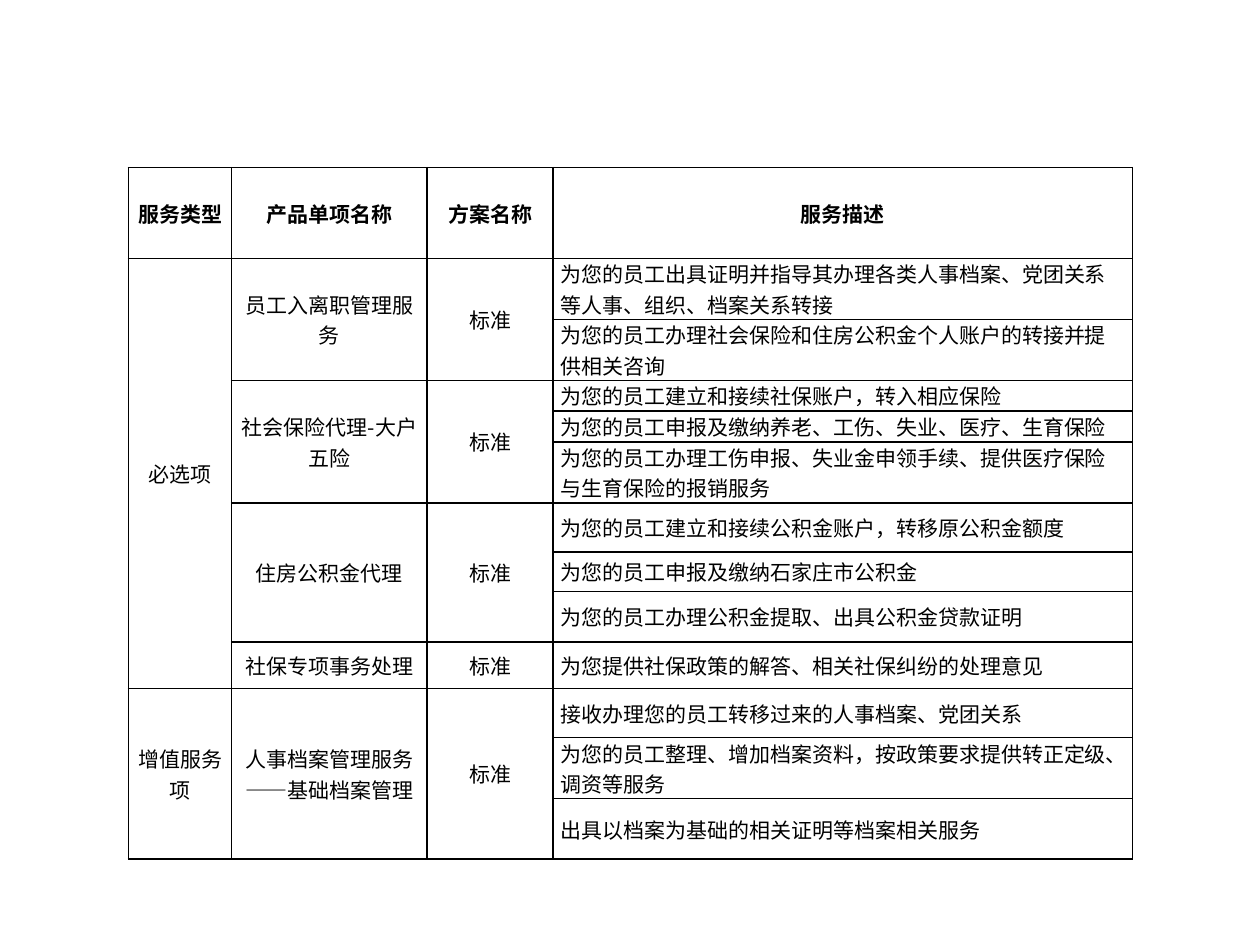
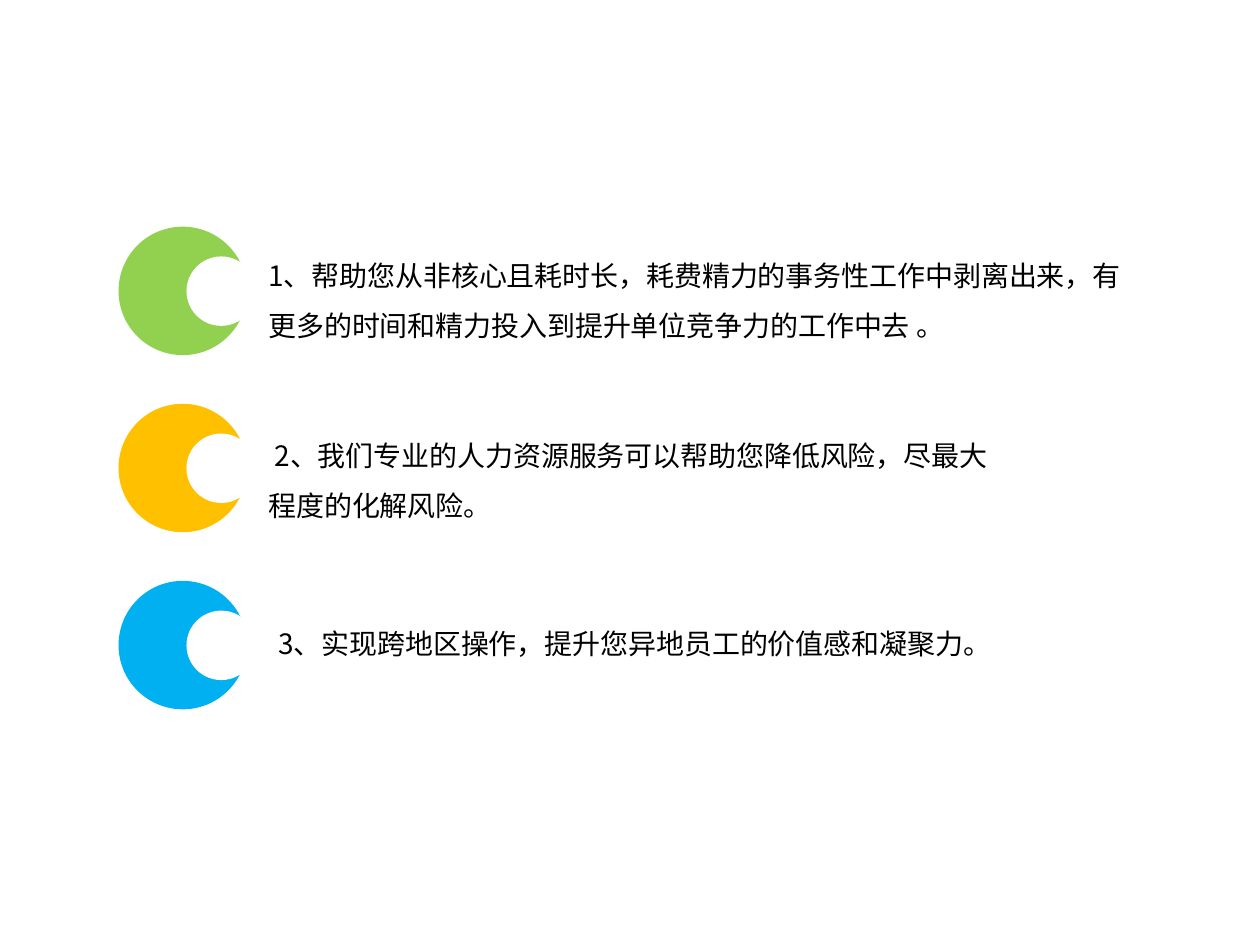
from lxml import etree
from pptx import Presentation
from pptx import util as u
from pptx.dml.color import RGBColor
from pptx.enum import shapes, text
from pptx.oxml.ns import qn

FONT = "Noto Sans CJK SC"
COLORS = {"ink": "000000", "paper": "FFFFFF", "green": "92D050",
          "amber": "FFC000", "blue": "00B0F0"}

HEADERS = ["服务类型", "产品单项名称", "方案名称", "服务描述"]
# Service type -> list of (product, plan, descriptions)
SERVICES = [
    ("必选项", [
        ("员工入离职管理服务", "标准", [
            "为您的员工出具证明并指导其办理各类人事档案、党团关系等人事、组织、档案关系转接",
            "为您的员工办理社会保险和住房公积金个人账户的转接并提供相关咨询"]),
        ("社会保险代理-大户五险", "标准", [
            "为您的员工建立和接续社保账户，转入相应保险",
            "为您的员工申报及缴纳养老、工伤、失业、医疗、生育保险",
            "为您的员工办理工伤申报、失业金申领手续、提供医疗保险与生育保险的报销服务"]),
        ("住房公积金代理", "标准", [
            "为您的员工建立和接续公积金账户，转移原公积金额度",
            "为您的员工申报及缴纳石家庄市公积金",
            "为您的员工办理公积金提取、出具公积金贷款证明"]),
        ("社保专项事务处理", "标准", [
            "为您提供社保政策的解答、相关社保纠纷的处理意见"]),
    ]),
    ("增值服务项", [
        ("人事档案管理服务——基础档案管理", "标准", [
            "接收办理您的员工转移过来的人事档案、党团关系",
            "为您的员工整理、增加档案资料，按政策要求提供转正定级、调资等服务",
            "出具以档案为基础的相关证明等档案相关服务"]),
    ]),
]
COL_WIDTHS = [2.08, 3.94, 2.54, 11.68]
ROW_HEIGHTS = [1.83, 1.23, 1.23, 0.62, 0.62, 1.23, 0.99, 0.79, 1.02, 0.94,
               0.99, 1.23, 1.22]

# Colour, text, text box (left, top, width, height), line spacing
BENEFITS = [
    ("green", "1、帮助您从非核心且耗时长，耗费精力的事务性工作中剥离出来，"
     "有更多的时间和精力投入到提升单位竞争力的工作中去 。",
     (5.16, 4.75, 17.86, 3.0), 1.5),
    ("amber", " 2、我们专业的人力资源服务可以帮助您降低风险，尽最大程度的化解风险。",
     (5.16, 8.38, 15.47, 3.07), 1.5),
    ("blue", "3、实现跨地区操作，提升您异地员工的价值感和凝聚力。",
     (5.36, 12.5, 16.66, 1.7), None),
]


def rgb(name):
    return RGBColor.from_string(COLORS[name])


def add_run(p, words, size, bold=False):
    r = p.add_run()
    r.text = words
    r.font.size = u.Pt(size)
    r.font.bold = bold
    r.font.name = FONT
    r.font.color.rgb = rgb("ink")
    etree.SubElement(r.font._element, qn("a:ea")).set("typeface", FONT)


def set_borders(cell):
    tc_pr = cell._tc.get_or_add_tcPr()
    for i, side in enumerate(("lnL", "lnR", "lnT", "lnB")):
        ln = etree.Element(qn(f"a:{side}"), w=str(u.Pt(1)))
        fill = etree.SubElement(ln, qn("a:solidFill"))
        etree.SubElement(fill, qn("a:srgbClr"), val=COLORS["ink"])
        tc_pr.insert(i, ln)


def fill_cell(cell, words, centred=True, bold=False):
    p = cell.text_frame.paragraphs[0]
    p.alignment = text.PP_ALIGN.CENTER if centred else text.PP_ALIGN.LEFT
    add_run(p, words, 12, bold)


def span_cell(table, row, col, count, words):
    cell = table.cell(row, col)
    if count > 1:
        cell.merge(table.cell(row + count - 1, col))
    fill_cell(cell, words)


def add_service_table(s, left, top):
    table = s.shapes.add_table(
        len(ROW_HEIGHTS), len(COL_WIDTHS), u.Cm(left), u.Cm(top),
        u.Cm(sum(COL_WIDTHS)), u.Cm(sum(ROW_HEIGHTS))).table
    table.first_row = table.horz_banding = False
    for column, width in zip(table.columns, COL_WIDTHS):
        column.width = u.Cm(width)
    for row, height in zip(table.rows, ROW_HEIGHTS):
        row.height = u.Cm(height)

    # Shared cell format
    for cell in table.iter_cells():
        cell.fill.background()
        cell.vertical_anchor = text.MSO_ANCHOR.MIDDLE
        cell.margin_left = cell.margin_right = u.Cm(0.15)
        cell.margin_top = cell.margin_bottom = 0
        set_borders(cell)

    # Header row, then services with spans counted from their descriptions
    for col, header in enumerate(HEADERS):
        fill_cell(table.cell(0, col), header, bold=True)
    row = 1
    for service, products in SERVICES:
        span_cell(table, row, 0, sum(len(d) for _, _, d in products), service)
        for product, plan, descriptions in products:
            span_cell(table, row, 1, len(descriptions), product)
            span_cell(table, row, 2, len(descriptions), plan)
            for description in descriptions:
                fill_cell(table.cell(row, 3), description, centred=False)
                row += 1


def add_crescent(s, left, top, color):
    group = s.shapes.add_group_shape()
    discs = [(0, 0, 2.59, color), (1.37, 0.6, 1.4, "paper")]
    for dx, dy, size, fill in discs:
        sp = group.shapes.add_shape(
            shapes.MSO_SHAPE.OVAL, u.Cm(left + dx), u.Cm(top + dy),
            u.Cm(size), u.Cm(size))
        sp.shadow.inherit = False
        sp.fill.solid()
        sp.fill.fore_color.rgb = rgb(fill)
        sp.line.fill.background()


def add_benefit_text(s, box, words, spacing):
    tf = s.shapes.add_textbox(*map(u.Cm, box)).text_frame
    tf.word_wrap = True
    p = tf.paragraphs[0]
    p.line_spacing = spacing
    add_run(p, words, 16)


def add_benefits(s, left, top, pitch):
    for i, (color, words, box, spacing) in enumerate(BENEFITS):
        add_crescent(s, left, top + i * pitch, color)
        add_benefit_text(s, box, words, spacing)


def main():
    prs = Presentation()
    prs.slide_width, prs.slide_height = u.Cm(25.4), u.Cm(19.05)
    blank = prs.slide_layouts[6]
    add_service_table(prs.slides.add_slide(blank), 2.59, 3.38)
    add_benefits(prs.slides.add_slide(blank), 2.39, 4.57, 3.57)
    prs.save("out.pptx")


if __name__ == "__main__":
    main()
